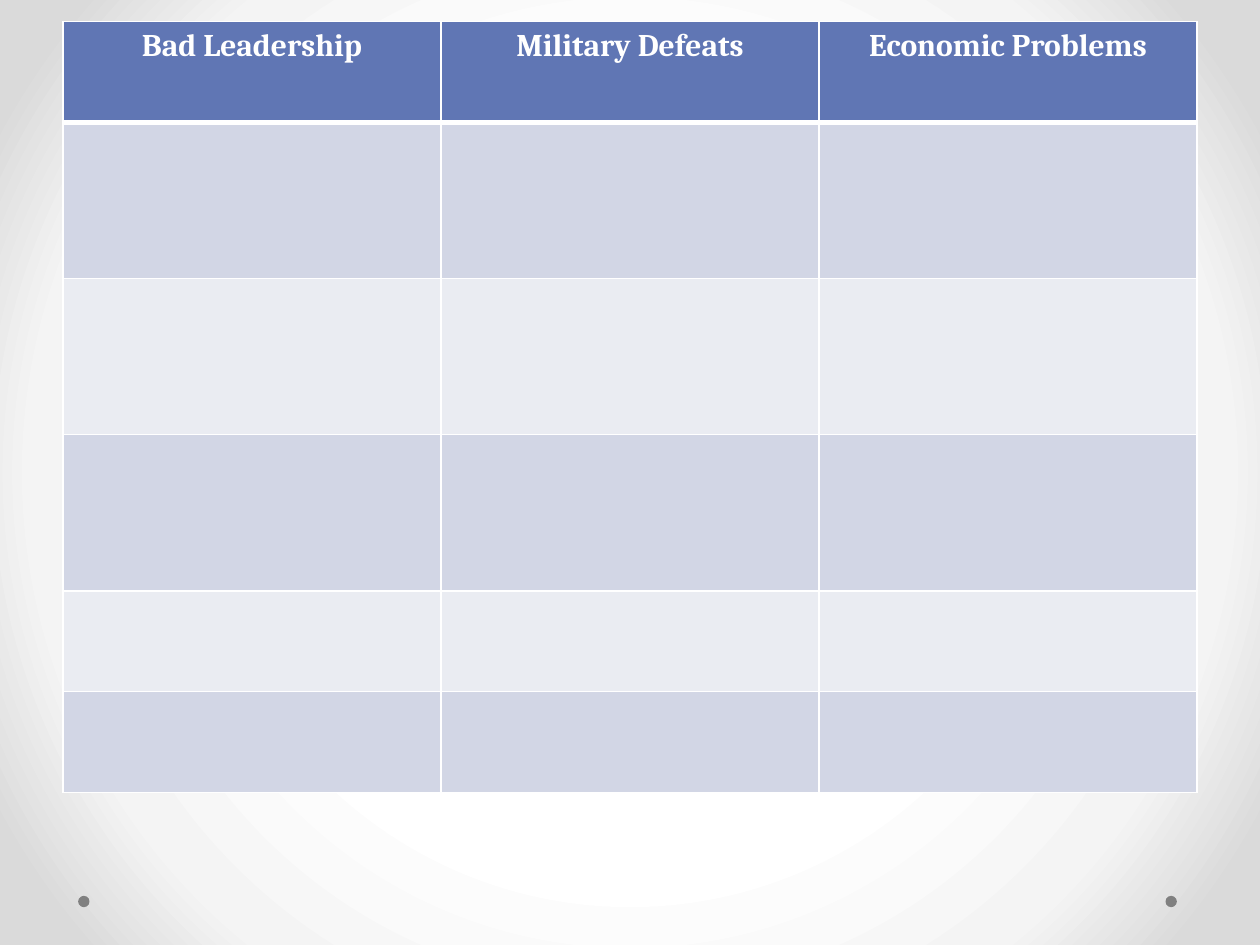
from pptx import Presentation
from pptx.dml.color import RGBColor
from pptx.enum.shapes import MSO_SHAPE
from pptx.enum.text import PP_ALIGN
from pptx.oxml import parse_xml
from pptx.oxml.ns import nsdecls
from pptx.util import Inches, Pt

OVAL = MSO_SHAPE.OVAL
CENTER = PP_ALIGN.CENTER

HEADINGS = ["Bad Leadership", "Military Defeats", "Economic Problems"]
COLUMN_WIDTH = 3
ROW_HEIGHTS = [0.8, 1.24, 1.24, 1.24, 0.8, 0.8]
HEADER_FILL = "6076B4"
BAND_FILLS = ["EAECF2", "D2D6E5"]
WHITE = "FFFFFF"
GRADIENT_STOPS = [(50, WHITE), (76, "F4F4F4"), (92, "DADADA")]


def color(value):
    return RGBColor.from_string(value)


def set_radial_background(slide, stops):
    stop_list = "".join(
        f'<a:gs pos="{percent * 1000}"><a:srgbClr val="{value}"/></a:gs>'
        for percent, value in stops
    )
    background = parse_xml(
        f'<p:bg {nsdecls("p", "a")}><p:bgPr><a:gradFill rotWithShape="1">'
        f'<a:gsLst>{stop_list}</a:gsLst><a:path path="circle">'
        '<a:fillToRect l="50000" t="50000" r="50000" b="50000"/></a:path>'
        '</a:gradFill><a:effectLst/></p:bgPr></p:bg>'
    )
    slide.element.cSld.insert(0, background)


def add_dot(slide, left, top, size=0.09, fill="808080"):
    dot = slide.shapes.add_shape(
        OVAL, Inches(left), Inches(top), Inches(size), Inches(size)
    )
    dot.shadow.inherit = False
    dot.fill.solid()
    dot.fill.fore_color.rgb = color(fill)
    dot.line.fill.background()


def write_text(frame, text, size=18, font="Cambria", fill=WHITE, bold=True, align=CENTER):
    para = frame.paragraphs[0]
    para.alignment = align
    span = para.add_run()
    span.text = text
    span.font.size = Pt(size)
    span.font.name = font
    span.font.bold = bold
    span.font.color.rgb = color(fill)


def style_cell(cell, fill, top=1, bottom=1):
    """Fill a cell and draw its white borders, with widths in points."""
    properties = cell._tc.get_or_add_tcPr()
    for side, width in (("L", 1), ("R", 1), ("T", top), ("B", bottom)):
        properties.append(parse_xml(
            f'<a:ln{side} {nsdecls("a")} w="{Pt(width)}"><a:solidFill>'
            f'<a:srgbClr val="{WHITE}"/></a:solidFill></a:ln{side}>'
        ))
    cell.fill.solid()
    cell.fill.fore_color.rgb = color(fill)


def add_causes_table(slide, left, top):
    frame = slide.shapes.add_table(
        len(ROW_HEIGHTS), len(HEADINGS), Inches(left), Inches(top),
        Inches(COLUMN_WIDTH * len(HEADINGS)), Inches(sum(ROW_HEIGHTS)),
    )
    table = frame.table
    for column in table.columns:
        column.width = Inches(COLUMN_WIDTH)
    for index, height in enumerate(ROW_HEIGHTS):
        row = table.rows[index]
        row.height = Inches(height)
        for cell in row.cells:
            style_cell(
                cell,
                BAND_FILLS[index % 2] if index else HEADER_FILL,
                top=3 if index == 1 else 1,
                bottom=3 if index == 0 else 1,
            )
    for cell, heading in zip(table.rows[0].cells, HEADINGS):
        write_text(cell.text_frame, heading)


def main():
    deck = Presentation()
    deck.slide_width = Inches(10)
    deck.slide_height = Inches(7.5)
    page = deck.slides.add_slide(deck.slide_layouts[6])
    set_radial_background(page, GRADIENT_STOPS)
    for left in (9.25, 0.62):
        add_dot(page, left, 7.11)
    add_causes_table(page, 0.5, 0.17)
    deck.save("out.pptx")


if __name__ == "__main__":
    main()
